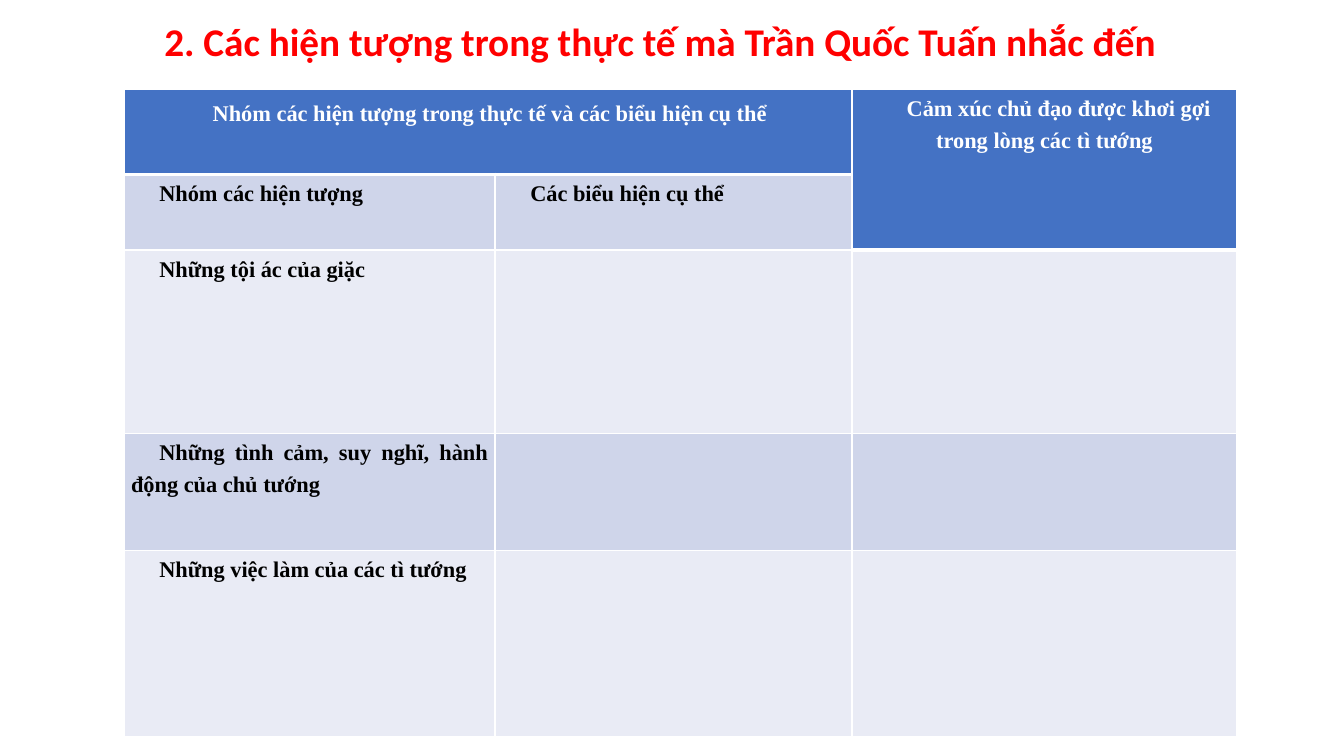
from dataclasses import dataclass

from lxml import etree
from pptx import Presentation
from pptx import util as u
from pptx.dml.color import RGBColor
from pptx.enum import text
from pptx.oxml import ns

WHITE, BLACK, RED = "FFFFFF", "000000", "FF0000"
HEADER_BLUE, BANDS = "4472C4", ("E9EBF5", "CFD5EA")
COLUMN_WIDTHS = (3.68, 3.54, 3.82)
ROW_HEIGHTS = (0.84, 0.75, 1.82, 1.16, 1.85)
HEADER_CELLS = {(0, 0), (0, 1), (0, 2), (1, 2)}
JUSTIFY, CENTER = text.PP_ALIGN.JUSTIFY, text.PP_ALIGN.CENTER


@dataclass
class Entry:
    row: int
    column: int
    wording: str
    color: str = BLACK
    alignment: text.PP_ALIGN = JUSTIFY
    indent: float = 0.28
    side_margin: float = 0.07
    top_margin: float = 0


ENTRIES = (
    Entry(0, 0, "Nhóm các hiện tượng trong thực tế và các biểu hiện cụ thể",
          WHITE, indent=0.78, side_margin=0.1, top_margin=0.05),
    Entry(0, 2, "Cảm xúc chủ đạo được khơi gợi trong lòng các tì tướng", WHITE, CENTER),
    Entry(1, 0, "Nhóm các hiện tượng"),
    Entry(1, 1, "Các biểu hiện cụ thể"),
    Entry(2, 0, "Những tội ác của giặc"),
    Entry(3, 0, "Những tình cảm, suy nghĩ, hành động của chủ tướng"),
    Entry(4, 0, "Những việc làm của các tì tướng"),
)


def rgb(color: str) -> RGBColor:
    return RGBColor.from_string(color)


def format_runs(paragraph, font_name: str, size: float, color: str) -> None:
    for run in paragraph.runs:
        run.font.name = font_name
        run.font.size = u.Pt(size)
        run.font.bold = True
        run.font.color.rgb = rgb(color)


def add_title(slide) -> None:
    box = slide.shapes.add_textbox(u.Inches(0.53), u.Inches(0.06), u.Inches(12.28), u.Inches(1.24))
    frame = box.text_frame
    frame.word_wrap = True
    frame.margin_left = u.Inches(1.1)
    frame.margin_top = u.Inches(0.11)
    frame.text = "2. Các hiện tượng trong thực tế mà Trần Quốc Tuấn nhắc đến"
    format_runs(frame.paragraphs[0], "Calibri", 28, RED)


def set_borders(cell, widths: dict[str, float]) -> None:
    properties = cell._tc.get_or_add_tcPr()
    for side, width in widths.items():
        line = etree.SubElement(properties, ns.qn(f"a:ln{side}"), w=str(u.Pt(width)))
        fill = etree.SubElement(line, ns.qn("a:solidFill"))
        etree.SubElement(fill, ns.qn("a:srgbClr"), val=WHITE)


def style_cell(table, row: int, column: int) -> None:
    cell = table.cell(row, column)
    is_header = (row, column) in HEADER_CELLS
    below_header = (row - 1, column) in HEADER_CELLS
    set_borders(cell, {"L": 1, "R": 1, "T": 3 if below_header else 1, "B": 3 if is_header else 1})
    cell.fill.solid()
    cell.fill.fore_color.rgb = rgb(HEADER_BLUE if is_header else BANDS[row % 2])


def write_entry(table, entry: Entry) -> None:
    cell = table.cell(entry.row, entry.column)
    cell.margin_left = cell.margin_right = u.Inches(entry.side_margin)
    cell.margin_top = cell.margin_bottom = u.Inches(entry.top_margin)
    cell.text_frame.text = entry.wording
    paragraph = cell.text_frame.paragraphs[0]
    paragraph.alignment = entry.alignment
    paragraph.line_spacing = 1.29
    paragraph.space_after = u.Pt(5)
    properties = paragraph._p.get_or_add_pPr()
    properties.set("marL", "0")
    properties.set("indent", str(u.Inches(entry.indent)))
    format_runs(paragraph, "Times New Roman", 16, entry.color)


def add_phenomena_table(slide) -> None:
    table = slide.shapes.add_table(
        len(ROW_HEIGHTS), len(COLUMN_WIDTHS), u.Inches(1.23), u.Inches(0.89),
        u.Inches(sum(COLUMN_WIDTHS)), u.Inches(sum(ROW_HEIGHTS))).table
    for column, width in zip(table.columns, COLUMN_WIDTHS):
        column.width = u.Inches(width)
    for row, height in zip(table.rows, ROW_HEIGHTS):
        row.height = u.Inches(height)
    for row in range(len(ROW_HEIGHTS)):
        for column in range(len(COLUMN_WIDTHS)):
            style_cell(table, row, column)
    table.cell(0, 0).merge(table.cell(0, 1))
    table.cell(0, 2).merge(table.cell(1, 2))
    for entry in ENTRIES:
        write_entry(table, entry)


def main() -> None:
    presentation = Presentation()
    presentation.slide_width = u.Inches(13.33)
    presentation.slide_height = u.Inches(7.5)
    slide = presentation.slides.add_slide(presentation.slide_layouts[6])
    add_title(slide)
    add_phenomena_table(slide)
    presentation.save("out.pptx")


if __name__ == "__main__":
    main()
